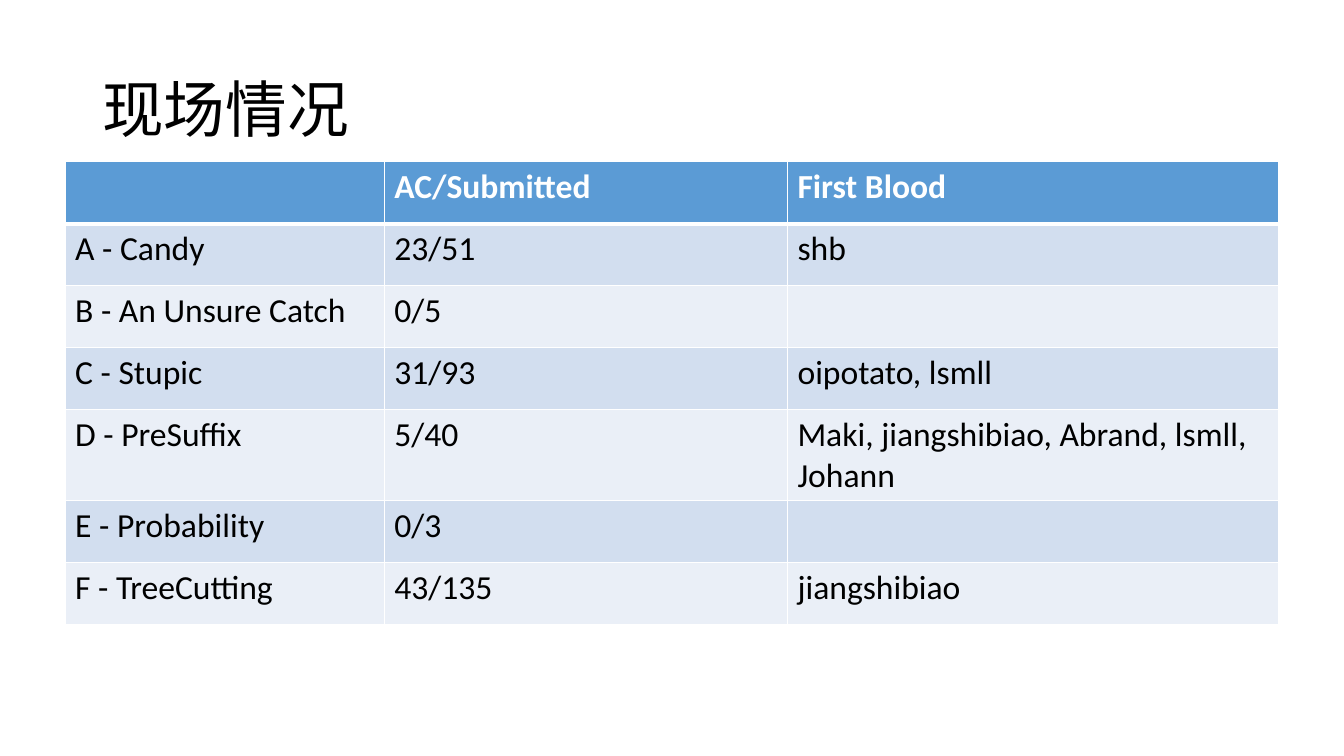
"""Build a contest results slide with a title and a table of problems."""
from dataclasses import dataclass

from lxml import etree
from pptx import Presentation
from pptx.dml.color import RGBColor
from pptx.enum.text import MSO_ANCHOR
from pptx.oxml.ns import qn
from pptx.util import Pt

MIDDLE = MSO_ANCHOR.MIDDLE
EMU_PER_PX = 9525

TITLE = "现场情况"
RESULTS = [
    ("", "AC/Submitted", "First Blood"),
    ("A - Candy", "23/51", "shb"),
    ("B - An Unsure Catch", "0/5", ""),
    ("C - Stupic", "31/93", "oipotato, lsmll"),
    ("D - PreSuffix", "5/40", "Maki, jiangshibiao, Abrand, lsmll, Johann"),
    ("E - Probability", "0/3", ""),
    ("F - TreeCutting", "43/135", "jiangshibiao"),
]

SLIDE_SIZE = (1280, 720)
TITLE_BOX = (88, 38, 1104, 139)
TABLE_CORNER = (62, 154)
COLUMN_WIDTHS = (304, 384, 468)
ROW_HEIGHT = 59


@dataclass(frozen=True)
class Theme:
    """Colours, font and sizes of the slide."""
    font: str = "Calibri"
    title_size: int = 44
    table_size: int = 24
    text: str = "000000"
    header_text: str = "FFFFFF"
    header: str = "5B9BD5"
    bands: tuple = ("D2DEEF", "EAEFF7")
    border: str = "FFFFFF"
    thin: int = 1
    thick: int = 3


THEME = Theme()


def px(*lengths):
    """Turn pixel lengths into EMU."""
    return [length * EMU_PER_PX for length in lengths]


def style_text(paragraph, size, color, bold=False):
    """Set the font of a whole paragraph."""
    font = paragraph.font
    font.name, font.size, font.bold = THEME.font, Pt(size), bold
    font.color.rgb = RGBColor.from_string(color)


def add_border(cell, side, width):
    """Draw one solid edge of a cell."""
    edge = etree.SubElement(cell._tc.get_or_add_tcPr(), qn(f"a:ln{side}"), w=str(Pt(width)))
    fill = etree.SubElement(edge, qn("a:solidFill"))
    etree.SubElement(fill, qn("a:srgbClr"), val=THEME.border)


def fill_cell(cell, text, row):
    """Write and style one cell of the results table."""
    is_header = row == 0
    heavy_side = {0: "B", 1: "T"}.get(row)
    for side in "LRTB":
        add_border(cell, side, THEME.thick if side == heavy_side else THEME.thin)
    cell.fill.solid()
    background = THEME.header if is_header else THEME.bands[(row - 1) % 2]
    cell.fill.fore_color.rgb = RGBColor.from_string(background)
    cell.text = text
    color = THEME.header_text if is_header else THEME.text
    style_text(cell.text_frame.paragraphs[0], THEME.table_size, color, is_header)


def add_title(slide):
    """Place the slide title."""
    frame = slide.shapes.add_textbox(*px(*TITLE_BOX)).text_frame
    frame.word_wrap = True
    frame.vertical_anchor = MIDDLE
    heading = frame.paragraphs[0]
    heading.text = TITLE
    heading.line_spacing = 0.9
    style_text(heading, THEME.title_size, THEME.text)


def add_results(slide):
    """Place the results table."""
    size = (sum(COLUMN_WIDTHS), ROW_HEIGHT * len(RESULTS))
    table = slide.shapes.add_table(
        len(RESULTS), len(COLUMN_WIDTHS), *px(*TABLE_CORNER, *size)).table
    for column, width in zip(table.columns, px(*COLUMN_WIDTHS)):
        column.width = width
    for row, problem in enumerate(RESULTS):
        for column, text in enumerate(problem):
            fill_cell(table.cell(row, column), text, row)


def main():
    """Create and save the presentation."""
    deck = Presentation()
    deck.slide_width, deck.slide_height = px(*SLIDE_SIZE)
    slide = deck.slides.add_slide(deck.slide_layouts[6])
    add_title(slide)
    add_results(slide)
    deck.save("out.pptx")


if __name__ == "__main__":
    main()
